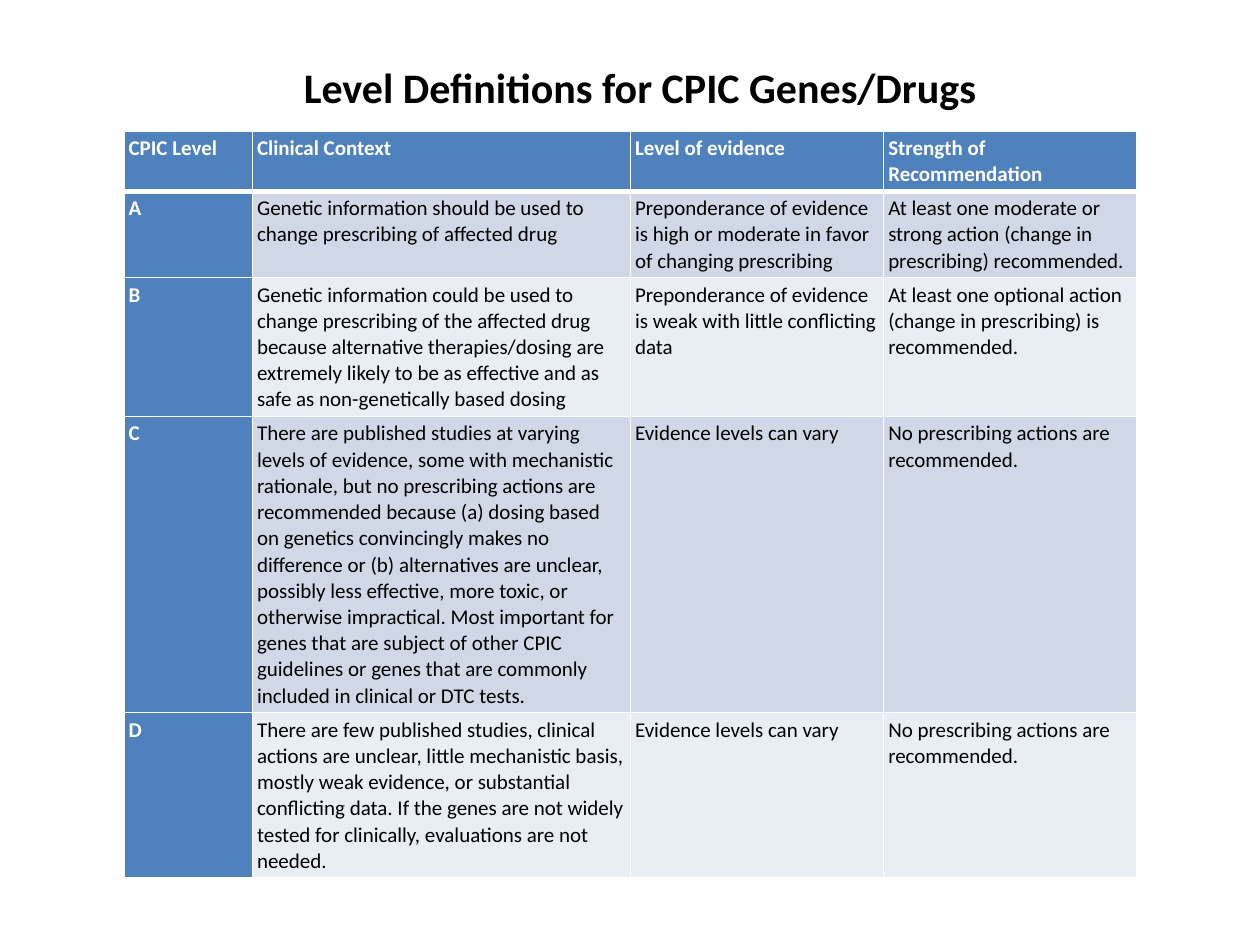
from dataclasses import dataclass
from typing import Any

import lxml.etree
import pptx
import pptx.dml.color
import pptx.enum.text
import pptx.oxml.ns
import pptx.util

Pt = pptx.util.Pt
RGBColor = pptx.dml.color.RGBColor
ALIGN = pptx.enum.text.PP_ALIGN
ANCHOR = pptx.enum.text.MSO_ANCHOR

WHITE = RGBColor(0xFF, 0xFF, 0xFF)
BLACK = RGBColor(0x00, 0x00, 0x00)
BLUE = RGBColor(0x4F, 0x81, 0xBD)
BANDS = (RGBColor(0xD0, 0xD8, 0xE8), RGBColor(0xE9, 0xED, 0xF4))

LINE = 15
INSET_X, INSET_Y = 2.7, 2.16
LEFT, TOP = 70.8, 75
COL_WIDTHS = (73.4, 216, 144.7, 144.7)
CELL_FORMAT = {
    "margin_left": Pt(INSET_X), "margin_right": Pt(INSET_X),
    "margin_top": Pt(INSET_Y), "margin_bottom": Pt(INSET_Y),
    "vertical_anchor": ANCHOR.TOP,
}
PARAGRAPH_FORMAT = {"line_spacing": Pt(LINE), "space_after": Pt(LINE), "alignment": ALIGN.LEFT}


@dataclass(frozen=True)
class Row:
    lines: int  # text lines in the tallest cell
    texts: tuple[str, str, str, str]


ROWS = (
    Row(2, ("CPIC Level", "Clinical Context", "Level of evidence", "Strength of Recommendation")),
    Row(3, (
        "A",
        "Genetic information should be used to change prescribing of affected drug",
        "Preponderance of evidence is high or moderate in favor of changing prescribing",
        "At least one moderate or strong action (change in prescribing) recommended.",
    )),
    Row(5, (
        "B",
        "Genetic information could be used to change prescribing of the affected drug because "
        "alternative therapies/dosing are extremely likely to be as effective and as safe as "
        "non-genetically based dosing",
        "Preponderance of evidence is weak with little conflicting data",
        "At least one optional action (change in prescribing) is recommended.",
    )),
    Row(11, (
        "C",
        "There are published studies at varying levels of evidence, some with mechanistic "
        "rationale, but no prescribing actions are recommended because (a) dosing based on "
        "genetics convincingly makes no difference or (b) alternatives are unclear, possibly "
        "less effective, more toxic, or otherwise impractical. Most important for genes that "
        "are subject of other CPIC guidelines or genes that are commonly included in clinical "
        "or DTC tests.",
        "Evidence levels can vary",
        "No prescribing actions are recommended.",
    )),
    Row(6, (
        "D",
        "There are few published studies, clinical actions are unclear, little mechanistic "
        "basis, mostly weak evidence, or substantial conflicting data. If the genes are not "
        "widely tested for clinically, evaluations are not needed.",
        "Evidence levels can vary",
        "No prescribing actions are recommended.",
    )),
)


def apply(target: Any, values: dict[str, Any]) -> None:
    for name, value in values.items():
        setattr(target, name, value)


def add_text(p: Any, text: str, size: float, color: RGBColor, bold: bool) -> None:
    r = p.add_run()
    r.text = text
    apply(r.font, {"name": "Calibri", "size": Pt(size), "bold": bold})
    r.font.color.rgb = color


def set_borders(cell: Any, widths: dict[str, float]) -> None:
    """Put white borders ahead of the cell's fill, as the schema orders them."""
    tc_pr = cell._tc.get_or_add_tcPr()
    qn = pptx.oxml.ns.qn
    for i, (side, width) in enumerate(widths.items()):
        ln = lxml.etree.Element(qn(f"a:ln{side}"), w=str(Pt(width)))
        fill = lxml.etree.SubElement(ln, qn("a:solidFill"))
        lxml.etree.SubElement(fill, qn("a:srgbClr"), val=str(WHITE))
        tc_pr.insert(i, ln)


def add_title(s: Any) -> None:
    tf = s.shapes.add_textbox(Pt(41.8), Pt(18), Pt(648), Pt(90)).text_frame
    # The deep bottom inset lifts the title clear of the table.
    apply(tf, {"word_wrap": True, "vertical_anchor": ANCHOR.MIDDLE, "margin_bottom": Pt(30)})
    p = tf.paragraphs[0]
    p.alignment = ALIGN.CENTER
    add_text(p, "Level Definitions for CPIC Genes/Drugs", 24, BLACK, True)


def add_level_table(s: Any) -> None:
    heights = [row.lines * LINE + 2 * INSET_Y for row in ROWS]
    table = s.shapes.add_table(
        len(ROWS), len(COL_WIDTHS), Pt(LEFT), Pt(TOP), Pt(sum(COL_WIDTHS)), Pt(sum(heights))
    ).table
    apply(table, {"first_row": True, "first_col": True, "horz_banding": False})
    for column, width in zip(table.columns, COL_WIDTHS):
        column.width = Pt(width)
    for i, (row, height) in enumerate(zip(ROWS, heights)):
        table.rows[i].height = Pt(height)
        for j, text in enumerate(row.texts):
            cell = table.cell(i, j)
            heading = i == 0 or j == 0
            apply(cell, CELL_FORMAT)
            cell.fill.solid()
            cell.fill.fore_color.rgb = BLUE if heading else BANDS[(i - 1) % 2]
            set_borders(cell, {"L": 1, "R": 1, "T": 3 if i == 1 else 1, "B": 3 if i == 0 else 1})
            p = cell.text_frame.paragraphs[0]
            apply(p, PARAGRAPH_FORMAT)
            add_text(p, text, 12, WHITE if heading else BLACK, heading)


def main() -> None:
    prs = pptx.Presentation()
    apply(prs, {"slide_width": Pt(720), "slide_height": Pt(540)})
    s = prs.slides.add_slide(prs.slide_layouts[6])
    add_level_table(s)
    add_title(s)
    prs.save("out.pptx")


if __name__ == "__main__":
    main()
